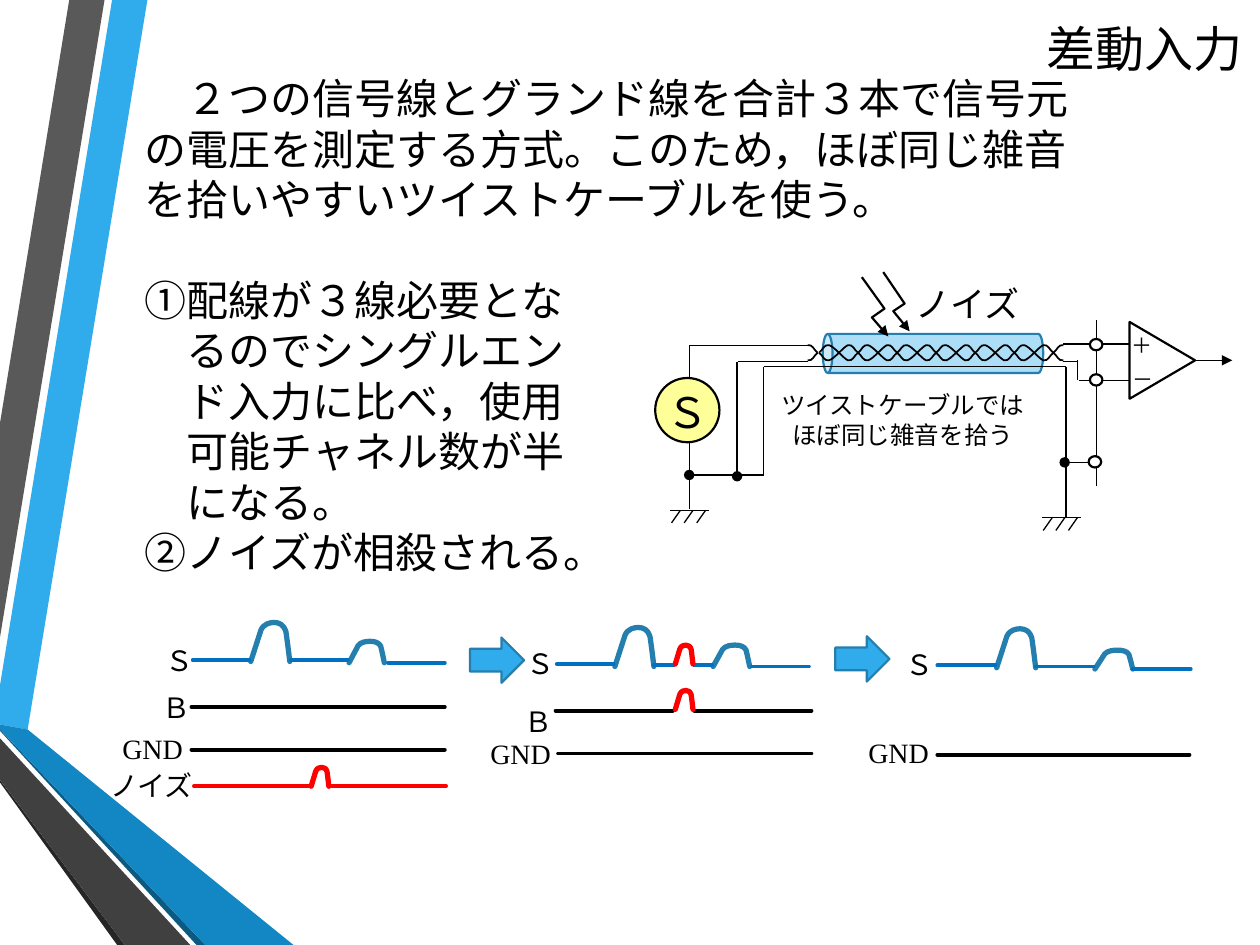
"""Build a slide that explains differential input with a circuit and waveforms."""
from lxml import etree
from pptx import Presentation
from pptx import util as u
from pptx.dml.color import RGBColor
from pptx.enum import shapes, text
from pptx.oxml.ns import qn

BLACK = RGBColor(0, 0, 0)
WHITE = RGBColor(255, 255, 255)
RED = RGBColor(255, 0, 0)
YELLOW = RGBColor(0xFF, 0xFF, 0x99)
SKY = RGBColor(0x30, 0xAC, 0xEC)
PALE = RGBColor(0xAC, 0xDE, 0xF7)
STEEL = RGBColor(0x24, 0x7F, 0xAF)
SIGNAL = RGBColor(0, 0x70, 0xC0)
CABIN, TIMES = "Cabin", "Times New Roman"
LEFT, CENTER, RIGHT = text.PP_ALIGN.LEFT, text.PP_ALIGN.CENTER, text.PP_ALIGN.RIGHT
SHAPE = shapes.MSO_SHAPE

RIBBONS = [
    (SKY, [(0, 5.44), (0, 5.75), (0.22, 5.79), (1.17, 0), (0.89, 0)]),
    (RGBColor(0x59, 0x59, 0x59), [(0.83, 0), (0.55, 0), (0, 3.36), (0, 5.06)]),
    (RGBColor(0x26, 0x26, 0x26), [(0, 6.19), (0, 6.21), (0.93, 7.5), (0.99, 7.5)]),
    (RGBColor(0x0C, 0x5A, 0x82), [(0, 5.79), (0, 5.8), (1.56, 7.5), (1.63, 7.5)]),
    (RGBColor(0x12, 0x87, 0xC3), [(0, 5.79), (1.63, 7.5), (2.33, 7.5), (0.22, 5.79), (0, 5.75)]),
    (RGBColor(0x40, 0x40, 0x40), [(0, 6.19), (0.99, 7.5), (1.51, 7.5), (0, 5.86)]),
]
BODY = [
    "　２つの信号線とグランド線を合計３本で信号元の電圧を測定する方式。このため，ほぼ同じ雑音を拾いやすいツイストケーブルを使う。",
    "①配線が３線必要とな",
    "　るのでシングルエン",
    "　ド入力に比べ，使用",
    "　可能チャネル数が半",
    "　になる。",
    "②ノイズが相殺される。",
]
WAVE_LABELS = [
    ("Ｓ", 1.11, 5.06, 0.52, RIGHT), ("Ｂ", 0.75, 5.43, 0.86, RIGHT),
    ("GND", 0.69, 5.76, 0.86, RIGHT), ("ノイズ", 0.43, 6.05, 1.2, RIGHT),
    ("Ｓ", 4.08, 5.08, 0.52, LEFT), ("Ｂ", 3.62, 5.54, 0.86, RIGHT),
    ("GND", 3.61, 5.8, 0.86, RIGHT),
    ("Ｓ", 7.09, 5.09, 0.52, LEFT), ("GND", 6.61, 5.79, 0.86, RIGHT),
]
SIGNAL_BUMPS = [
    (1.99, 4.94, 0.31, 0.31), (2.77, 5.09, 0.28, 0.17),
    (4.88, 4.98, 0.31, 0.31), (5.66, 5.12, 0.29, 0.17),
    (7.91, 4.99, 0.31, 0.31), (8.69, 5.16, 0.3, 0.15),
]
LEVELS = [
    (1.53, 1.98, 5.24, SIGNAL), (2.31, 2.76, 5.24, SIGNAL), (3.08, 3.53, 5.26, SIGNAL),
    (4.42, 4.87, 5.27, SIGNAL), (5.19, 5.65, 5.28, SIGNAL), (5.97, 6.42, 5.29, SIGNAL),
    (7.44, 7.9, 5.28, SIGNAL), (8.22, 8.68, 5.29, SIGNAL), (8.99, 9.45, 5.31, SIGNAL),
    (1.52, 3.53, 5.61, BLACK), (1.52, 3.53, 5.95, BLACK),
    (1.54, 2.47, 6.24, RED), (2.61, 3.54, 6.24, RED),
    (4.41, 5.34, 5.64, BLACK), (5.51, 6.44, 5.64, BLACK),
    (4.43, 6.44, 5.98, BLACK), (7.44, 9.44, 5.99, BLACK),
]
NOISE_BUMPS = [(2.47, 6.09, None), (5.36, 5.12, WHITE), (5.36, 5.48, None)]
WIRES = [
    (9.38, 2.86, 9.78, 2.86, {"tail": "triangle"}), (8.56, 3.02, 8.99, 3.02, {}),
    (5.47, 2.74, 5.47, 4.04, {}), (5.85, 2.87, 5.85, 3.78, {"tail": "oval"}),
    (5.47, 3.77, 6.06, 3.77, {"head": "oval"}), (6.06, 2.91, 8.46, 2.91, {}),
    (8.46, 2.91, 8.46, 4.13, {}), (5.47, 2.74, 6.41, 2.74, {}),
    (8.45, 3.67, 8.7, 3.67, {"head": "oval"}), (6.06, 2.91, 6.06, 3.77, {}),
    (5.86, 2.87, 6.41, 2.87, {}), (8.44, 2.73, 9.07, 2.73, {}),
    (8.44, 2.87, 8.55, 2.87, {}), (8.55, 2.86, 8.55, 3.02, {}),
    (8.7, 2.54, 8.7, 3.86, {}),
]
GROUNDS = [(5.32, 4.05), (8.27, 4.11)]
TERMINALS = [(8.65, 2.69), (8.65, 2.97), (8.64, 3.62)]
LIGHTNING = [
    [(6.84, 2.2), (7.02, 2.45), (6.92, 2.52), (7.05, 2.67)],
    [(7.01, 2.16), (7.18, 2.41), (7.09, 2.47), (7.22, 2.63)],
]
BUMP = [(0, 1), (0.26, 0.2), (0.33, 0.03), (0.5, 0), (0.6, 0), (0.73, 0), (0.85, 0.06),
        (0.9, 0.23), (0.94, 0.5), (0.97, 0.75), (1, 1)]
TWIST = [(0, 0), (0.03, -0.02), (0.04, -0.07), (0.08, -0.06), (0.12, -0.05),
         (0.2, 0.05), (0.23, 0.06), (0.27, 0.07), (0.28, 0.02), (0.31, 0)]
TWIST_END = [(0, 0.06), (0.04, 0.07), (0.05, 0.02), (0.08, 0)]

presentation = Presentation()
presentation.slide_width, presentation.slide_height = u.Inches(10), u.Inches(7.5)
slide = presentation.slides.add_slide(presentation.slide_layouts[6])


def paint(shape, fill=None, line=None, width=1.25):
    shape.shadow.inherit = False
    if fill is None:
        shape.fill.background()
    else:
        shape.fill.solid()
        shape.fill.fore_color.rgb = fill
    if line is None:
        shape.line.fill.background()
    else:
        shape.line.color.rgb = line
        shape.line.width = u.Pt(width)


def style_ends(shape, head=None, tail=None, cap="flat"):
    outline = shape.line._get_or_add_ln()
    outline.set("cap", cap)
    for tag, kind in (("a:headEnd", head), ("a:tailEnd", tail)):
        if kind:
            etree.SubElement(outline, qn(tag), type=kind)


def add_line(x1, y1, x2, y2, color=BLACK, width=0.75, **ends):
    line = slide.shapes.add_connector(
        shapes.MSO_CONNECTOR.STRAIGHT, *map(u.Inches, (x1, y1, x2, y2)))
    line.line.color.rgb = color
    line.line.width = u.Pt(width)
    style_ends(line, **ends)
    etree.SubElement(line._element.spPr, qn("a:effectLst"))


def add_shape(kind, left, top, width, height, fill, line=None, rotation=0):
    shape = slide.shapes.add_shape(kind, *map(u.Inches, (left, top, width, height)))
    shape.rotation = rotation
    paint(shape, fill, line)


def add_path(points, close=False, **style):
    points = [(u.Inches(x), u.Inches(y)) for x, y in points]
    builder = slide.shapes.build_freeform(*points[0])
    builder.add_line_segments(points[1:], close=close)
    shape = builder.convert_to_shape()
    paint(shape, **style)
    return shape


def add_curve(points, x, y, x_scale=1, y_scale=1, **style):
    """Draw cubic curves, after one straight segment if a point is left over."""
    shape = add_path([(x + px * x_scale, y + py * y_scale) for px, py in points], **style)
    segments = list(shape._element.iter(qn("a:lnTo")))
    for start in range(len(segments) % 3, len(segments), 3):
        first, *others = segments[start:start + 3]
        first.tag = qn("a:cubicBezTo")
        for segment in others:
            first.append(segment[0])
            segment.getparent().remove(segment)
    return shape


def add_text(lines, left, top, width, height, size, font=TIMES, align=LEFT):
    box = slide.shapes.add_textbox(*map(u.Inches, (left, top, width, height)))
    frame = box.text_frame
    frame.word_wrap = True
    frame.text = "\n".join(lines)
    for paragraph in frame.paragraphs:
        paragraph.alignment = align
        paragraph.font.size = u.Pt(size)
        paragraph.font.name = font
        paragraph.font.color.rgb = BLACK
    return frame


for color, outline in RIBBONS:
    add_path(outline, close=True, fill=color)

title = add_text(["差動入力"], 1.53, -0.01, 8.43, 0.78, 28, CABIN, RIGHT)
title.vertical_anchor = text.MSO_ANCHOR.MIDDLE
body = add_text(BODY, 1.05, 0.53, 7.6, 4.54, 24, CABIN)
body.paragraphs[1].space_before = u.Pt(28.8)

for x, y, width, height in SIGNAL_BUMPS:
    style_ends(add_curve(BUMP, x, y, width, height, line=STEEL, width=3), cap="rnd")
for x1, x2, y, color in LEVELS:
    add_line(x1, y, x2, y, color, 2.25, cap="rnd")
add_shape(SHAPE.RECTANGLE, 5.36, 5.25, 0.14, 0.08, WHITE)
for x, y, fill in NOISE_BUMPS:
    style_ends(add_curve(BUMP, x, y, 0.14, 0.15, fill=fill, line=RED, width=3), cap="rnd")
for label, x, y, width, align in WAVE_LABELS:
    add_text([label], x, y, width, 0.37, 16, align=align)
for x, y in [(3.73, 5.06), (6.63, 5.05)]:
    add_shape(SHAPE.RIGHT_ARROW, x, y, 0.43, 0.36, SKY, STEEL)

add_shape(SHAPE.CAN, 7.25, 1.93, 0.31, 1.75, PALE, STEEL, 270)
for x1, y1, x2, y2, ends in WIRES:
    add_line(x1, y1, x2, y2, **ends)
for x, y in GROUNDS:
    add_shape(SHAPE.RECTANGLE, x + 0.01, y, 0.3, 0.11, WHITE)
    add_line(x, y, x + 0.31, y)
    for stroke in (0.08, 0.18, 0.28):
        add_line(x + stroke, y, x + stroke - 0.07, y + 0.1)
add_shape(SHAPE.OVAL, 5.2, 3, 0.51, 0.51, YELLOW, BLACK)
add_text(["Ｓ"], 5.19, 3.02, 0.52, 0.5, 24, CABIN)
for points in LIGHTNING:
    style_ends(add_path(points, line=BLACK), tail="triangle")
add_text(["ノイズ"], 6.99, 2.19, 1.2, 0.44, 20, align=RIGHT)

for flip in (1, -1):
    for turn in range(6):
        add_curve(TWIST, 6.5 + 0.31 * turn, 2.8, y_scale=flip, line=BLACK, width=1)
    for x, direction in ((6.41, 1), (8.44, -1)):
        add_curve(TWIST_END, x, 2.8, direction, flip, line=BLACK, width=1)

add_shape(SHAPE.ISOSCELES_TRIANGLE, 8.92, 2.6, 0.61, 0.52, WHITE, BLACK, 90)
for x, y in TERMINALS:
    add_shape(SHAPE.OVAL, x, y, 0.1, 0.09, WHITE, BLACK)
add_text(["＋"], 8.88, 2.59, 0.34, 0.3, 12)
add_text(["－"], 8.89, 2.86, 0.34, 0.3, 12)
add_text(["ツイストケーブルではほぼ同じ雑音を拾う"], 6.06, 3.05, 2.21, 0.57, 14, align=CENTER)

presentation.save("out.pptx")
